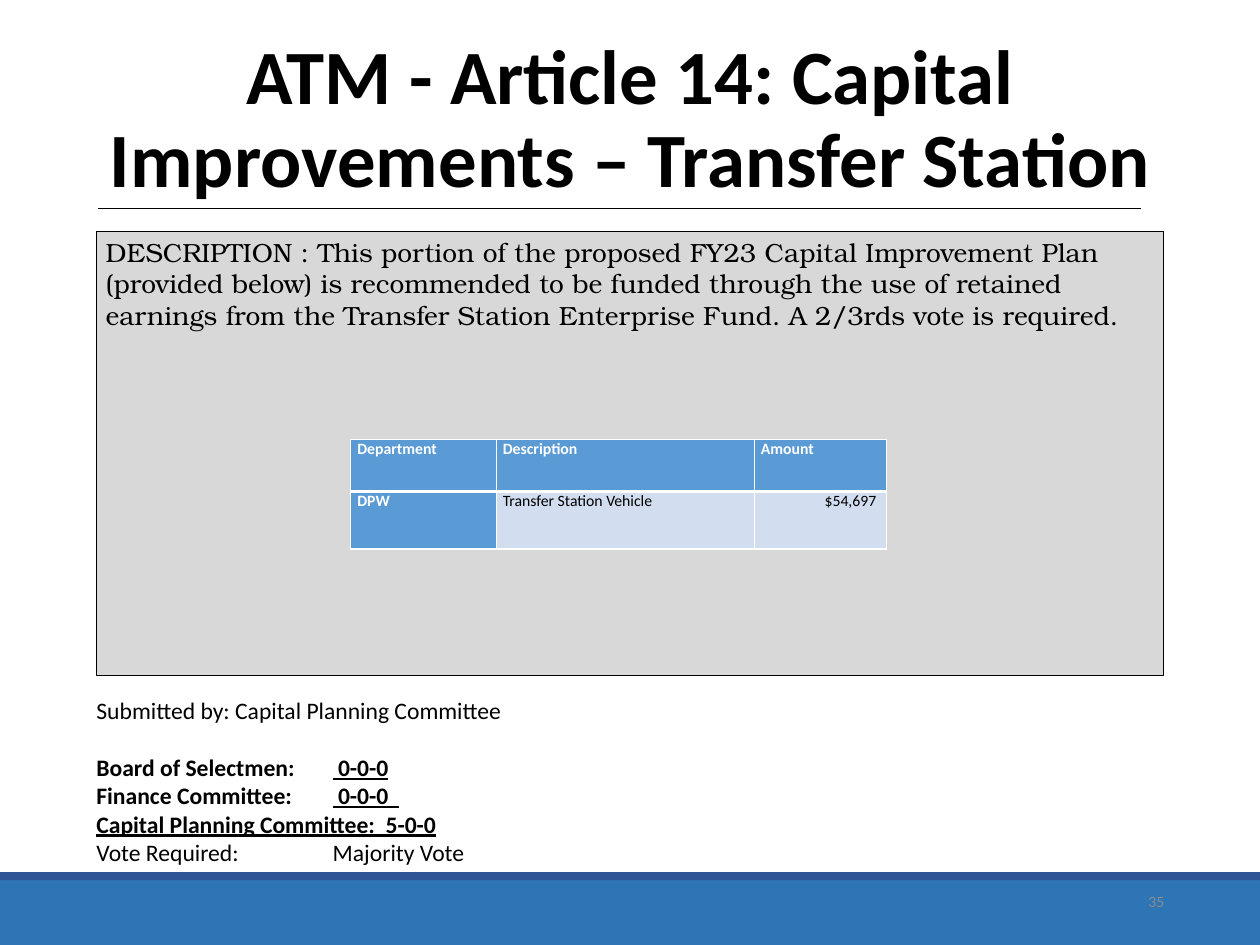
from typing import NamedTuple

from lxml.etree import SubElement
from pptx import Presentation
from pptx.dml.color import RGBColor
from pptx.enum.shapes import MSO_CONNECTOR as Connector, MSO_SHAPE as Shape
from pptx.enum.text import MSO_ANCHOR as Anchor, MSO_AUTO_SIZE as AutoSize, PP_ALIGN as Align
from pptx.oxml import parse_xml
from pptx.oxml.ns import nsdecls, qn
from pptx.util import Inches, Pt

WIDTH, HEIGHT = Inches(13.33), Inches(10)
BLACK, WHITE = "000000", "FFFFFF"
SANS, SERIF = "Calibri", "TeX Gyre Bonum"
VOTES = [
    [("Submitted by: Capital Planning Committee", False, False)],
    [("Board of Selectmen:\t", True, False), (" 0-0-0", True, True)],
    [("Finance Committee:\t", True, False), (" 0-0-0  ", True, True)],
    [("Capital Planning Committee:  5-0-0\t", True, True)],
    [("Vote Required: \t\tMajority Vote", False, False)],
]
ROWS = [("Department", "Description", "Amount"), ("DPW", "Transfer Station Vehicle", "$54,697 ")]
COLUMN_WEIGHTS, ROW_WEIGHTS = (1.54, 2.73, 1.4), (0.55, 0.61)


class Box(NamedTuple):
    """A rectangle in percent of the slide's width and height."""
    left: float
    top: float
    width: float
    height: float

    def emu(self):
        """Return left, top, width and height as slide lengths."""
        sides = (WIDTH, HEIGHT, WIDTH, HEIGHT)
        return [int(share * side / 100) for share, side in zip(self, sides)]


def colour(value):
    """Turn a hex string into a colour."""
    return RGBColor.from_string(value)


def place(shape, box):
    """Move a shape into the box."""
    shape.left, shape.top, shape.width, shape.height = box.emu()


def add_span(para, text, size, font=SANS, ink=BLACK, bold=False, underline=False):
    """Append one formatted run to a paragraph."""
    span = para.add_run()
    span.text = text
    span.font.size, span.font.name = Pt(size), font
    span.font.bold, span.font.underline = bold, underline
    span.font.color.rgb = colour(ink)


def set_frame(shape, anchor):
    """Wrap the text at a fixed size and return its frame."""
    frame = shape.text_frame
    frame.word_wrap, frame.auto_size = True, AutoSize.NONE
    frame.vertical_anchor = anchor
    return frame


def add_block(page, box, fill, line=None):
    """Add a flat rectangle, outlined if a line colour is given."""
    block = page.shapes.add_shape(Shape.RECTANGLE, *box.emu())
    block.shadow.inherit = False
    block.fill.solid()
    block.fill.fore_color.rgb = colour(fill)
    if line:
        block.line.color.rgb = colour(line)
        block.line.width = Pt(0.75)
    else:
        block.line.fill.background()
    return block


def add_footer(page, box):
    """Draw the footer bands and the page number."""
    strip = box.height * 0.11
    add_block(page, box._replace(top=box.top + strip, height=box.height - strip), "2E75B6")
    add_block(page, box._replace(height=strip), "2F5597")
    number = Box(box.width * 0.7065, box.top + 0.4, box.width * 0.225, 5.3)
    frame = set_frame(page.shapes.add_textbox(*number.emu()), Anchor.MIDDLE)
    para = frame.paragraphs[0]
    para.alignment = Align.RIGHT
    add_span(para, "35", 12, ink="8C8C8C")


def add_title(page, box):
    """Fill the title placeholder and rule it off below."""
    title = page.shapes.title
    place(title, box)
    para = set_frame(title, Anchor.BOTTOM).paragraphs[0]
    para.alignment, para.line_spacing = Align.CENTER, 0.9
    add_span(para, "ATM - Article 14: Capital Improvements – Transfer Station", 58.5, bold=True)
    left, top, width, height = box.emu()
    start, base = left + int(width * 0.01), top + height
    rule = page.shapes.add_connector(
        Connector.STRAIGHT, start, base, start + int(width * 0.96), base)
    rule.line.color.rgb, rule.line.width = colour(BLACK), Pt(0.5)
    SubElement(rule.element.spPr, qn("a:effectLst"))


def add_description(page, box):
    """Draw the grey panel with the description at its top."""
    panel = add_block(page, box, "D8D8D8", BLACK)
    para = set_frame(panel, Anchor.TOP).paragraphs[0]
    para.alignment, para.space_after = Align.LEFT, Pt(8)
    add_span(para, "DESCRIPTION : This portion of the proposed FY23 Capital Improvement Plan "
             "(provided below) is recommended to be funded through the use of retained earnings "
             "from the Transfer Station Enterprise Fund. A 2/3rds vote is required.", 20, SERIF)


def add_votes(page, box):
    """Fill the body placeholder with the committee votes."""
    body = page.placeholders[1]
    place(body, box)
    frame = set_frame(body, Anchor.TOP)
    for index, spans in enumerate(VOTES):
        para = frame.add_paragraph() if index else frame.paragraphs[0]
        para.alignment = Align.LEFT
        para.space_before = Pt(22 if index == 1 else 0)
        properties = para._p.get_or_add_pPr()
        properties.set("marL", "0")
        properties.set("indent", "0")
        SubElement(properties, qn("a:buNone"))
        for text, bold, underline in spans:
            add_span(para, text, 18, bold=bold, underline=underline)


def set_borders(cell, bottom):
    """Give a cell white borders with the given bottom width."""
    widths = {"lnL": 1, "lnR": 1, "lnT": 1, "lnB": bottom}
    for index, (side, width) in enumerate(widths.items()):
        cell._tc.get_or_add_tcPr().insert(index, parse_xml(
            f'<a:{side} {nsdecls("a")} w="{Pt(width)}"><a:solidFill>'
            f'<a:srgbClr val="{WHITE}"/></a:solidFill></a:{side}>'))


def add_costs(page, box):
    """Add the table of requested amounts."""
    table = page.shapes.add_table(len(ROWS), len(ROWS[0]), *box.emu()).table
    table.first_row = table.horz_banding = False
    _, _, width, height = box.emu()
    for column, weight in zip(table.columns, COLUMN_WEIGHTS):
        column.width = int(width * weight / sum(COLUMN_WEIGHTS))
    for row, weight in zip(table.rows, ROW_WEIGHTS):
        row.height = int(height * weight / sum(ROW_WEIGHTS))
    for r, texts in enumerate(ROWS):
        for c, text in enumerate(texts):
            cell, heading = table.cell(r, c), r == 0 or c == 0
            cell.margin_left = cell.margin_right = Inches(0.07)
            cell.margin_top = cell.margin_bottom = 0
            cell.fill.solid()
            cell.fill.fore_color.rgb = colour("5B9BD5" if heading else "D2DEEF")
            set_borders(cell, 3 if r == 0 else 1)
            para = cell.text_frame.paragraphs[0]
            para.alignment = Align.JUSTIFY if heading or c == 1 else Align.RIGHT
            add_span(para, text, 12, ink=WHITE if heading else BLACK, bold=heading)


def main():
    """Build the slide and save the deck."""
    deck = Presentation()
    deck.slide_width, deck.slide_height = WIDTH, HEIGHT
    page = deck.slides.add_slide(deck.slide_layouts[1])
    add_footer(page, Box(0, 92.3, 100, 7.7))
    add_title(page, Box(6.9, 2.8, 86.25, 19.25))
    add_description(page, Box(7.65, 24.5, 84.7, 47))
    add_votes(page, Box(6.9, 73.1, 60.9, 19.2))
    add_costs(page, Box(27.83, 46.5, 42.53, 11.6))
    deck.save("out.pptx")


if __name__ == "__main__":
    main()
